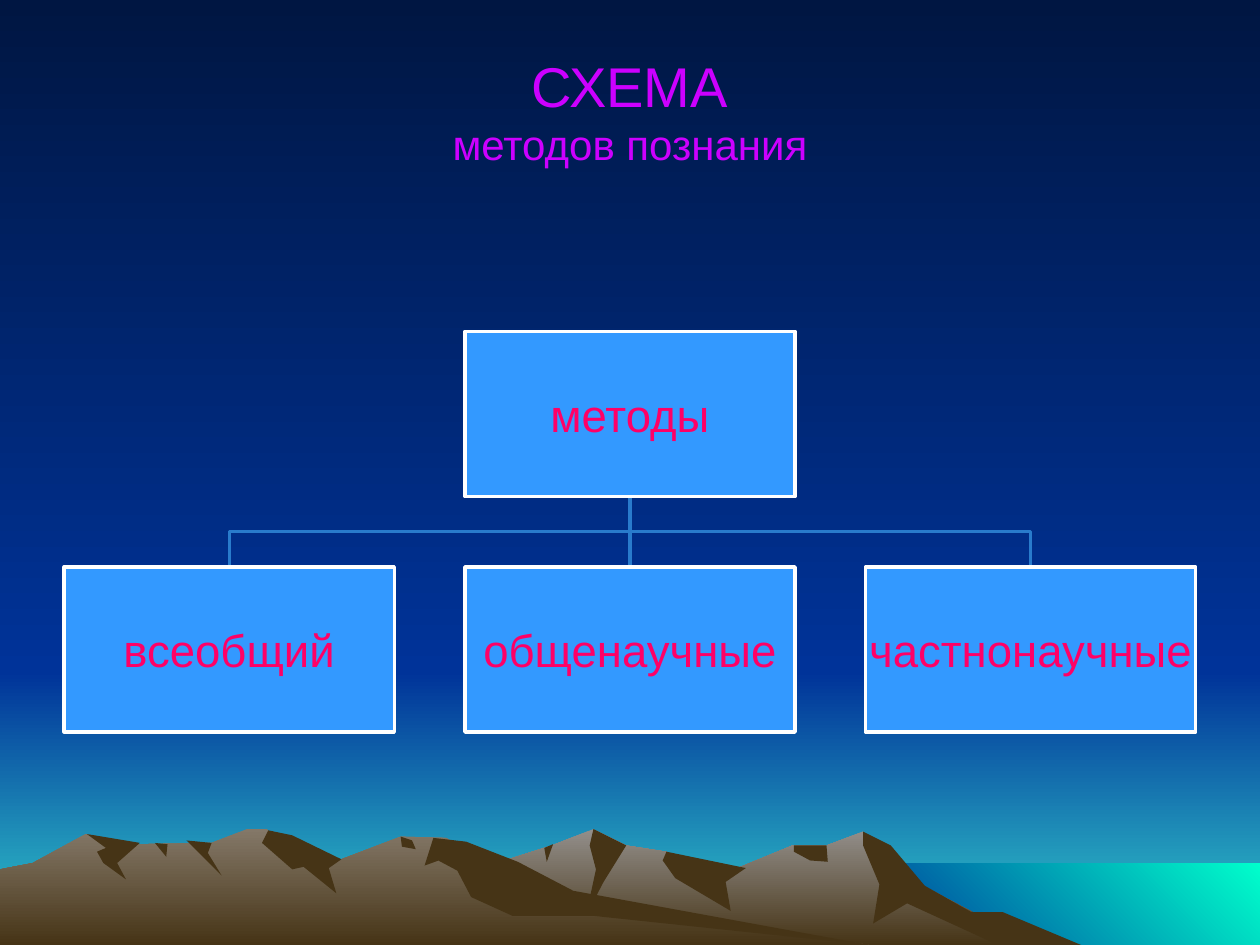
from dataclasses import dataclass
from typing import Optional

from pptx import Presentation
from pptx.dml.color import RGBColor
from pptx.dml.fill import FillFormat
from pptx.enum.shapes import MSO_CONNECTOR, MSO_SHAPE
from pptx.enum.text import MSO_ANCHOR, PP_ALIGN
from pptx.oxml import parse_xml
from pptx.shapes.autoshape import Shape
from pptx.shapes.connector import Connector
from pptx.slide import Slide
from pptx.text.text import TextFrame
from pptx.util import Emu, Pt

PX = 9144
WIDTH = 1000
HEIGHT = 750
HORIZON = 533
DOWNWARD = 270
RISING = 45
EFFECT_LIST = '<a:effectLst xmlns:a="http://schemas.openxmlformats.org/drawingml/2006/main"/>'
Points = tuple[tuple[int, int], ...]


@dataclass(frozen=True)
class Theme:
    font: str = "Arial"
    night: str = "001642"
    blue: str = "003399"
    horizon: str = "33CCCC"
    sea: str = "00FFCC"
    far_rock: str = "938F8B"
    near_rock: str = "847868"
    earth: str = "463416"
    title: str = "CC00FF"
    box: str = "3399FF"
    border: str = "FFFFFF"
    label: str = "FF0066"
    link: str = "297BCC"
    title_size: int = 32
    subtitle_size: int = 24
    label_size: int = 26
    line_width: int = 2


THEME = Theme()


@dataclass(frozen=True)
class Area:
    points: Points
    start: str = THEME.earth
    end: Optional[str] = None
    angle: int = DOWNWARD


@dataclass(frozen=True)
class Box:
    label: str
    center: int
    top: int
    width: int = 262
    height: int = 131

    @property
    def bottom(self) -> int:
        return self.top + self.height


def band(left: int, top: int, bottom: int) -> Points:
    return (left, top), (WIDTH, top), (WIDTH, bottom), (left, bottom)


def ridge(left: int, right: int, *crest: tuple[int, int]) -> Points:
    return (left, HEIGHT), *crest, (right, HEIGHT)


FAR_RIDGE = ridge(
    258, 821, (327, 709), (394, 685), (438, 671), (471, 658), (497, 671), (529, 676),
    (536, 690), (566, 697), (629, 671), (656, 671), (685, 660), (723, 698))
NEAR_RIDGE = ridge(
    0, 690, (0, 690), (26, 685), (68, 662), (111, 670), (168, 669), (196, 658), (212, 658),
    (236, 681), (271, 682), (318, 664), (354, 665), (432, 712))
FAR_SHADOWS = (
    ridge(792, 858, (720, 717), (693, 733), (698, 702), (685, 671), (685, 660), (707, 671),
          (734, 703), (771, 724), (796, 724)),
    ((471, 658), (468, 671), (473, 690), (465, 727), (479, 700), (497, 671)),
    ((529, 676), (526, 683), (536, 697), (580, 723), (576, 700), (592, 689)),
    ((630, 671), (630, 676), (643, 683), (657, 684), (656, 671)),
    ((432, 673), (439, 670), (434, 684)),
)
NEAR_SHADOWS = (
    ((213, 659), (208, 669), (232, 690), (241, 688), (267, 709), (261, 689), (271, 682),
     (232, 663)),
    ((344, 665), (337, 687), (348, 683), (363, 691), (374, 712), (407, 727), (472, 727),
     (690, 750), (455, 707), (411, 684), (370, 668)),
    ((318, 664), (327, 667), (330, 674), (319, 672)),
    ((148, 667), (168, 669), (165, 677), (176, 695)),
    ((123, 669), (133, 670), (132, 680)),
    ((69, 662), (111, 669), (93, 685), (100, 698), (82, 685), (77, 676), (84, 673)),
)
LANDSCAPE = (
    Area(band(0, HORIZON, HEIGHT), THEME.blue, THEME.horizon),
    Area(band(0, 0, HORIZON), THEME.night, THEME.blue),
    Area(band(683, 685, HEIGHT), THEME.blue, THEME.sea, RISING),
    Area(FAR_RIDGE, THEME.far_rock, THEME.earth),
    *map(Area, FAR_SHADOWS),
    Area(NEAR_RIDGE, THEME.near_rock, THEME.earth),
    *map(Area, NEAR_SHADOWS),
)

COLUMN_STEP = 318
ROOT = Box("методы", WIDTH // 2, 263)
CHILDREN = tuple(
    Box(label, ROOT.center + (index - 1) * COLUMN_STEP, 450)
    for index, label in enumerate(("всеобщий", "общенаучные", "частнонаучные"))
)


def color(value: str) -> RGBColor:
    return RGBColor.from_string(value)


def fill_gradient(fill: FillFormat, start: str, end: str, angle: int) -> None:
    fill.gradient()
    fill.gradient_angle = angle
    for stop, value in zip(fill.gradient_stops, (start, end)):
        stop.color.rgb = color(value)


def draw_path(slide: Slide, points: Points, close: bool) -> Shape:
    builder = slide.shapes.build_freeform(*points[0], scale=PX)
    builder.add_line_segments(points[1:], close=close)
    shape = builder.convert_to_shape()
    shape.shadow.inherit = False
    return shape


def draw_area(slide: Slide, area: Area) -> None:
    shape = draw_path(slide, area.points, True)
    shape.line.fill.background()
    if area.end:
        fill_gradient(shape.fill, area.start, area.end, area.angle)
    else:
        shape.fill.solid()
        shape.fill.fore_color.rgb = color(area.start)


def style_line(shape: Shape | Connector, value: str) -> None:
    shape.line.color.rgb = color(value)
    shape.line.width = Pt(THEME.line_width)


def draw_elbow(slide: Slide, parent: Box, child: Box) -> None:
    middle = (parent.bottom + child.top) // 2
    points = ((parent.center, parent.bottom), (parent.center, middle),
              (child.center, middle), (child.center, child.top))
    shape = draw_path(slide, points, False)
    shape.fill.background()
    style_line(shape, THEME.link)


def draw_straight(slide: Slide, parent: Box, child: Box) -> Connector:
    connector = slide.shapes.add_connector(
        MSO_CONNECTOR.STRAIGHT, Emu(parent.center * PX), Emu(parent.bottom * PX),
        Emu(child.center * PX), Emu(child.top * PX))
    style_line(connector, THEME.link)
    connector._element.spPr.append(parse_xml(EFFECT_LIST))
    return connector


def style_text(frame: TextFrame, value: str) -> None:
    frame.vertical_anchor = MSO_ANCHOR.MIDDLE
    paragraph = frame.paragraphs[0]
    paragraph.alignment = PP_ALIGN.CENTER
    paragraph.font.name = THEME.font
    paragraph.font.color.rgb = color(value)


def draw_box(slide: Slide, box: Box) -> Shape:
    shape = slide.shapes.add_shape(
        MSO_SHAPE.RECTANGLE, Emu((box.center - box.width // 2) * PX), Emu(box.top * PX),
        Emu(box.width * PX), Emu(box.height * PX))
    shape.shadow.inherit = False
    shape.fill.solid()
    shape.fill.fore_color.rgb = color(THEME.box)
    style_line(shape, THEME.border)
    frame = shape.text_frame
    frame.margin_left = frame.margin_right = frame.margin_top = frame.margin_bottom = Emu(2 * PX)
    frame.word_wrap = False
    frame.text = box.label
    style_text(frame, THEME.label)
    frame.paragraphs[0].font.size = Pt(THEME.label_size)
    return shape


def draw_title(slide: Slide) -> None:
    frame = slide.shapes.add_textbox(
        Emu(50 * PX), Emu(25 * PX), Emu(900 * PX), Emu(125 * PX)).text_frame
    frame.word_wrap = True
    frame.text = "СХЕМА\vметодов познания"
    style_text(frame, THEME.title)
    for run, size in zip(frame.paragraphs[0].runs, (THEME.title_size, THEME.subtitle_size)):
        run.font.size = Pt(size)


def draw_tree(slide: Slide) -> None:
    left, middle, right = CHILDREN
    draw_elbow(slide, ROOT, right)
    connector = draw_straight(slide, ROOT, middle)
    draw_elbow(slide, ROOT, left)
    shapes = {box: draw_box(slide, box) for box in (ROOT, *CHILDREN)}
    connector.begin_connect(shapes[ROOT], 2)
    connector.end_connect(shapes[middle], 0)


def main() -> None:
    presentation = Presentation()
    presentation.slide_width = Emu(WIDTH * PX)
    presentation.slide_height = Emu(HEIGHT * PX)
    slide = presentation.slides.add_slide(presentation.slide_layouts[6])
    fill_gradient(slide.background.fill, THEME.night, THEME.blue, DOWNWARD)
    for area in LANDSCAPE:
        draw_area(slide, area)
    draw_title(slide)
    draw_tree(slide)
    presentation.save("out.pptx")


if __name__ == "__main__":
    main()
